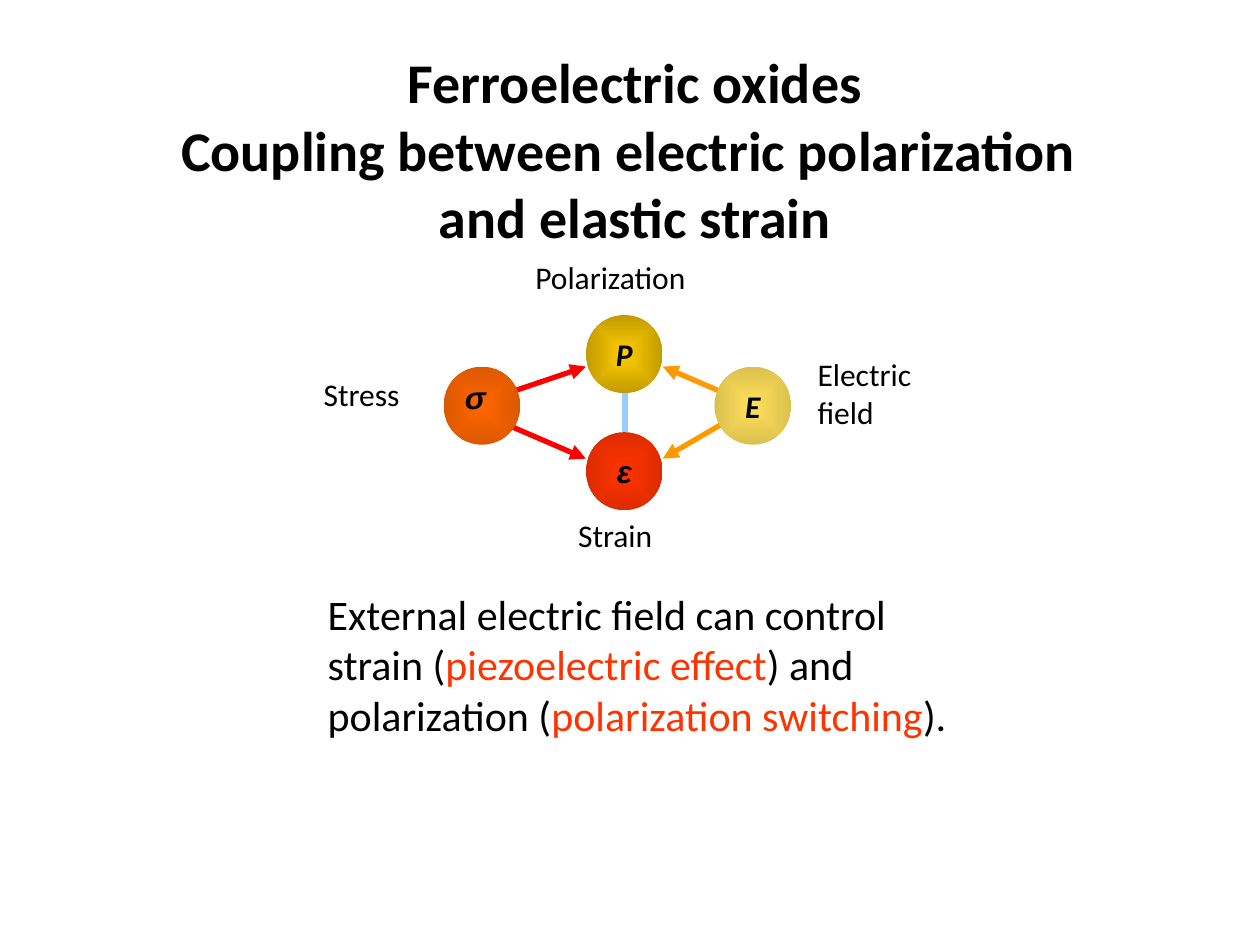
from dataclasses import dataclass

from lxml.etree import SubElement
from pptx import Presentation
from pptx.dml.color import RGBColor
from pptx.enum.shapes import MSO_CONNECTOR as Connector, MSO_SHAPE as Shape
from pptx.enum.text import MSO_ANCHOR as Anchor, MSO_AUTO_SIZE as AutoSize, PP_ALIGN as Align
from pptx.oxml.ns import qn
from pptx.slide import Slide
from pptx.util import Inches, Pt


@dataclass(frozen=True)
class Theme:
    text: str = "000000"
    accent: str = "FF3300"
    stress: str = "FF0000"
    field: str = "FF9900"
    link: str = "99CCFF"
    font: str = "Calibri"
    greek_font: str = "Arial"
    title_size: int = 32
    body_size: int = 24
    label_size: int = 18
    line_width: int = 3
    node_width: float = 0.61
    node_height: float = 0.62


@dataclass(frozen=True)
class Node:
    left: float
    top: float
    center_color: str
    edge_color: str
    symbol: str = ""
    font: str = "Calibri"


@dataclass(frozen=True)
class Link:
    start: tuple[float, float]
    end: tuple[float, float]
    color: str
    arrow: bool = True


@dataclass(frozen=True)
class Label:
    text: str
    left: float
    top: float
    width: float
    height: float = 0.4
    font: str = "Calibri"
    emphasis: bool = False


THEME = Theme()

# Stacked from back to front: the field arrows start behind the E node.
DIAGRAM = [
    Node(4.65, 2.5, "FFCC00", "C29B00", "P"),
    Node(4.65, 3.43, "FF3300", "DC2C00", "ε", THEME.greek_font),
    Link((4.96, 3.12), (4.96, 3.43), THEME.link, arrow=False),
    Link((4.03, 3.12), (4.65, 2.91), THEME.stress),
    Link((3.93, 3.33), (4.65, 3.64), THEME.stress),
    Node(3.52, 2.91, "FF6600", "DC5800"),
    Label("Polarization", 4.15, 2, 1.41),
    Label("Strain", 4.49, 4.05, 0.8),
    Link((5.98, 3.22), (5.26, 2.91), THEME.field),
    Link((5.98, 3.22), (5.26, 3.64), THEME.field),
    Node(5.67, 2.91, "FFE05B", "DBC04E", "E"),
    Label("Electric\nfield", 6.39, 2.77, 0.94, 0.7),
    Label("Stress", 2.47, 2.93, 0.81),
    Label("σ", 3.59, 2.95, 0.35, font=THEME.greek_font, emphasis=True),
]

STATEMENT = [
    [("External electric field can control", THEME.text)],
    [("strain (", THEME.text), ("piezoelectric effect", THEME.accent), (") and", THEME.text)],
    [("polarization (", THEME.text), ("polarization switching", THEME.accent), (").", THEME.text)],
]


def style_run(run, size: int, font: str = THEME.font, color: str = THEME.text,
              bold: bool = False, italic: bool = False) -> None:
    run.font.size = Pt(size)
    run.font.name = font
    run.font.color.rgb = RGBColor.from_string(color)
    run.font.bold = bold
    run.font.italic = italic


def style_frame(frame, **style) -> None:
    for paragraph in frame.paragraphs:
        for run in paragraph.runs:
            style_run(run, **style)


def place(shape, left: float, top: float, width: float, height: float) -> None:
    shape.left, shape.top = Inches(left), Inches(top)
    shape.width, shape.height = Inches(width), Inches(height)


def fill_radially(shape, center_color: str, edge_color: str) -> None:
    """Shade the shape from its center out to its outline."""
    shape.fill.gradient()
    for stop, color, position in zip(shape.fill.gradient_stops, (center_color, edge_color), (0, 1)):
        stop.color.rgb = RGBColor.from_string(color)
        stop.position = position
    gradient = shape.element.spPr.find(qn("a:gradFill"))
    gradient.remove(gradient.find(qn("a:lin")))
    shading = SubElement(gradient, qn("a:path"), {"path": "shape"})
    SubElement(shading, qn("a:fillToRect"), {side: "50000" for side in "ltrb"})


def draw_node(slide: Slide, node: Node) -> None:
    circle = slide.shapes.add_shape(Shape.OVAL, Inches(node.left), Inches(node.top),
                                    Inches(THEME.node_width), Inches(THEME.node_height))
    circle.shadow.inherit = False
    circle.line.fill.background()
    fill_radially(circle, node.center_color, node.edge_color)
    if node.symbol:
        frame = circle.text_frame
        frame.text = node.symbol
        frame.word_wrap = False
        frame.vertical_anchor = Anchor.MIDDLE
        frame.paragraphs[0].alignment = Align.CENTER
        style_frame(frame, size=THEME.label_size, font=node.font, bold=True, italic=True)


def draw_link(slide: Slide, link: Link) -> None:
    line = slide.shapes.add_connector(Connector.STRAIGHT, *map(Inches, link.start + link.end))
    line.line.color.rgb = RGBColor.from_string(link.color)
    line.line.width = Pt(THEME.line_width)
    if link.arrow:
        SubElement(line.line._get_or_add_ln(), qn("a:tailEnd"), {"type": "triangle"})
    SubElement(line._element.spPr, qn("a:effectLst"))


def draw_label(slide: Slide, label: Label) -> None:
    box = slide.shapes.add_textbox(Inches(label.left), Inches(label.top),
                                   Inches(label.width), Inches(label.height))
    frame = box.text_frame
    frame.text = label.text
    frame.word_wrap = False
    style_frame(frame, size=THEME.label_size, font=label.font,
                bold=label.emphasis, italic=label.emphasis)


def write_title(slide: Slide) -> None:
    title = slide.shapes.title
    place(title, 0.33, 0.33, 9.42, 1.72)
    frame = title.text_frame
    frame.text = "Ferroelectric oxides\nCoupling between electric polarization \vand elastic strain"
    frame.auto_size = AutoSize.NONE
    frame.vertical_anchor = Anchor.TOP
    for paragraph in frame.paragraphs:
        paragraph.alignment = Align.CENTER
    style_frame(frame, size=THEME.title_size, bold=True)


def write_statement(slide: Slide) -> None:
    body = slide.placeholders[1]
    place(body, 2.5, 4.62, 5.58, 1.3)
    frame = body.text_frame
    frame.auto_size = AutoSize.NONE
    for index, phrases in enumerate(STATEMENT):
        paragraph = frame.add_paragraph() if index else frame.paragraphs[0]
        paragraph.space_before = Pt(0)
        properties = paragraph._p.get_or_add_pPr()
        properties.set("marL", "0")
        properties.set("indent", "0")
        SubElement(properties, qn("a:buNone"))
        for words, color in phrases:
            run = paragraph.add_run()
            run.text = words
            style_run(run, THEME.body_size, color=color)


def main() -> None:
    deck = Presentation()
    deck.slide_width, deck.slide_height = Inches(10), Inches(7.5)
    slide = deck.slides.add_slide(deck.slide_layouts[1])
    write_title(slide)
    painters = {Node: draw_node, Link: draw_link, Label: draw_label}
    for part in DIAGRAM:
        painters[type(part)](slide, part)
    write_statement(slide)
    deck.save("out.pptx")


if __name__ == "__main__":
    main()
